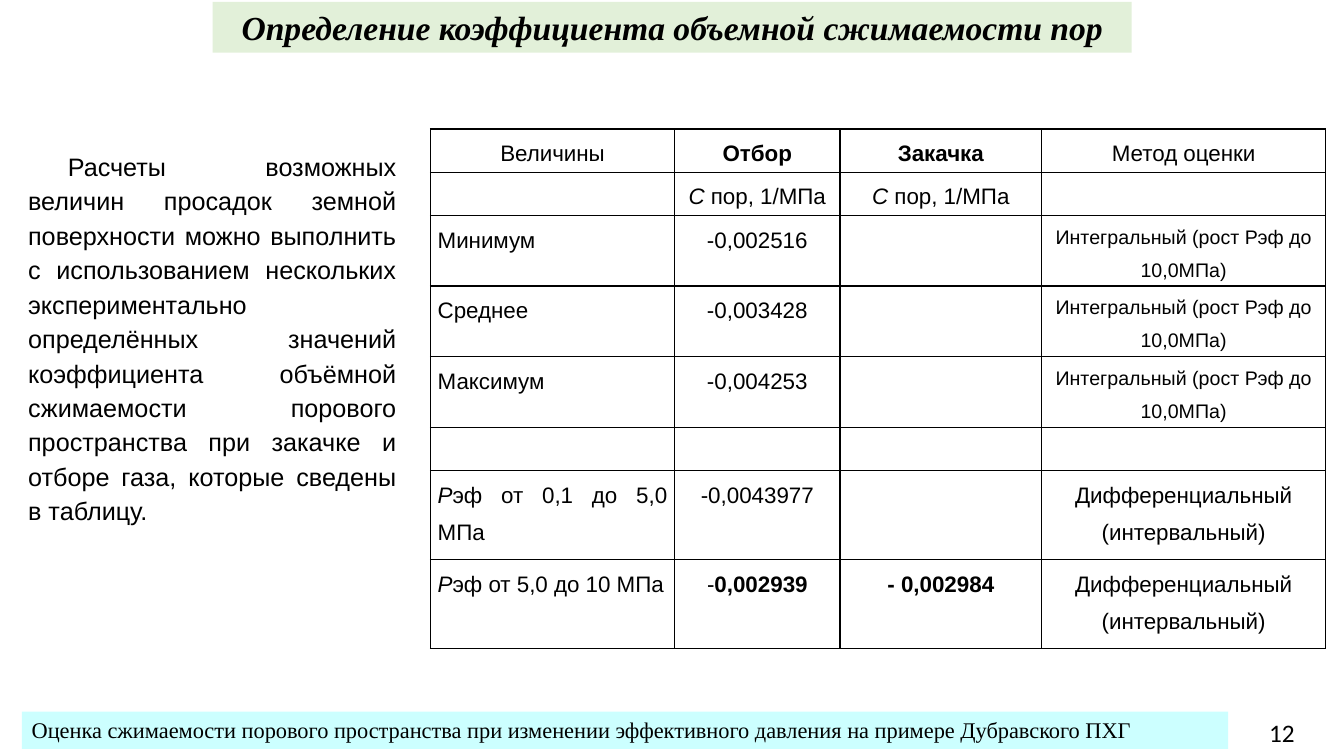
from dataclasses import dataclass

from pptx import Presentation
from pptx.dml.color import RGBColor
from pptx.enum.shapes import MSO_SHAPE
from pptx.enum.text import MSO_ANCHOR, MSO_AUTO_SIZE, PP_ALIGN
from pptx.oxml import parse_xml
from pptx.oxml.ns import nsdecls
from pptx.util import Cm, Pt

CENTER, JUSTIFY, LEFT = PP_ALIGN.CENTER, PP_ALIGN.JUSTIFY, PP_ALIGN.LEFT
TOP = MSO_ANCHOR.TOP
FIT_SHAPE, FIXED_SIZE = MSO_AUTO_SIZE.SHAPE_TO_FIT_TEXT, MSO_AUTO_SIZE.NONE
RECTANGLE = MSO_SHAPE.RECTANGLE
TITLE_ONLY = 5
BLACK, GREEN, CYAN = "000000", "E2F0D9", "CCFFFF"
SERIF, SANS, NUMBER_FONT = "Times New Roman", "Arial", "Calibri"


@dataclass
class Box:
    left: float
    top: float
    width: float
    height: float

    def lengths(self):
        return Cm(self.left), Cm(self.top), Cm(self.width), Cm(self.height)


@dataclass
class Span:
    text: str
    bold: bool = False
    italic: bool = False


@dataclass
class Entry:
    """Content of one table cell."""
    spans: list[Span]
    align: PP_ALIGN = CENTER
    size: float = 16


def color(hex_text: str) -> RGBColor:
    return RGBColor.from_string(hex_text)


def format_run(r, font: str, size: float, bold: bool = False, italic: bool = False) -> None:
    r.font.name, r.font.size = font, Pt(size)
    r.font.bold, r.font.italic = bold, italic
    r.font.color.rgb = color(BLACK)


def write_text(sp, text: str, font: str, size: float, align: PP_ALIGN,
               emphasis: bool = False, auto_size: MSO_AUTO_SIZE = FIT_SHAPE):
    tf = sp.text_frame
    tf.text = text
    tf.word_wrap, tf.auto_size, tf.vertical_anchor = True, auto_size, TOP
    p = tf.paragraphs[0]
    p.alignment = align
    format_run(p.runs[0], font, size, emphasis, emphasis)
    return p


def fill_shape(sp, hex_text: str) -> None:
    sp.fill.solid()
    sp.fill.fore_color.rgb = color(hex_text)


def outline_cell(cell) -> None:
    tc_pr = cell._tc.get_or_add_tcPr()
    for side in "LRTB":
        tc_pr.append(parse_xml(
            f'<a:ln{side} w="12700" {nsdecls("a")}><a:solidFill>'
            f'<a:srgbClr val="{BLACK}"/></a:solidFill></a:ln{side}>'))


def draw_cell(cell, entry: Entry) -> None:
    outline_cell(cell)
    cell.fill.background()
    cell.margin_left = cell.margin_right = Cm(0.18)
    cell.margin_top = cell.margin_bottom = Cm(0)
    p = cell.text_frame.paragraphs[0]
    p.alignment, p.line_spacing, p.space_after = entry.align, 1.5, Pt(8)
    p.font.size = Pt(entry.size)
    for span in entry.spans:
        r = p.add_run()
        r.text = span.text
        format_run(r, SANS, entry.size, span.bold, span.italic)


def plain(text: str) -> Entry:
    return Entry([Span(text)])


def strong(text: str) -> Entry:
    return Entry([Span(text, bold=True)])


def label(text: str) -> Entry:
    return Entry([Span(text)], JUSTIFY)


def pressure(text: str) -> Entry:
    return Entry([Span("Р", italic=True), Span(text)], JUSTIFY)


EMPTY = Entry([])
UNIT = Entry([Span("С", italic=True), Span(" пор, 1/МПа")])
INTEGRAL = Entry([Span("Интегральный (рост Рэф до 10,0МПа)")], size=14)
DIFFERENTIAL = plain("Дифференциальный (интервальный)")
ROWS = [
    [plain("Величины"), strong("Отбор"), strong("Закачка"), plain("Метод оценки")],
    [EMPTY, UNIT, UNIT, EMPTY],
    [label("Минимум"), plain("-0,002516"), EMPTY, INTEGRAL],
    [label("Среднее"), plain("-0,003428"), EMPTY, INTEGRAL],
    [label("Максимум"), plain("-0,004253"), EMPTY, INTEGRAL],
    [EMPTY] * 4,
    [pressure("эф от 0,1 до 5,0 МПа"), plain("-0,0043977"), EMPTY, DIFFERENTIAL],
    [pressure("эф от 5,0 до 10 МПа"), Entry([Span("-"), Span("0,002939", bold=True)]),
     strong("- 0,002984"), DIFFERENTIAL],
]
COLUMN_WIDTHS = [6.15, 4.17, 5.08, 7.16]
ROW_HEIGHTS = [1.09] * 6 + [2.24] * 2
TABLE_BOX = Box(10.85, 3.25, sum(COLUMN_WIDTHS), sum(ROW_HEIGHTS))


def draw_table(shapes) -> None:
    table = shapes.add_table(len(ROWS), len(COLUMN_WIDTHS), *TABLE_BOX.lengths()).table
    table.first_row = table.horz_banding = False
    for column, width in zip(table.columns, COLUMN_WIDTHS):
        column.width = Cm(width)
    for row, height, entries in zip(table.rows, ROW_HEIGHTS, ROWS):
        row.height = Cm(height)
        for cell, entry in zip(row.cells, entries):
            draw_cell(cell, entry)


def main() -> None:
    prs = Presentation()
    prs.slide_width, prs.slide_height = Cm(33.87), Cm(19.05)
    shapes = prs.slides.add_slide(prs.slide_layouts[TITLE_ONLY]).shapes

    title = shapes.title
    title.left, title.top, title.width, title.height = Box(5.36, 0.05, 23.16, 1.28).lengths()
    fill_shape(title, GREEN)
    write_text(title, "Определение коэффициента объемной сжимаемости пор",
               SERIF, 24, CENTER, emphasis=True, auto_size=FIXED_SIZE)

    footer = shapes.add_shape(RECTANGLE, *Box(0.55, 17.93, 30.4, 0.94).lengths())
    footer.shadow.inherit = False
    footer.line.fill.background()
    fill_shape(footer, CYAN)
    write_text(footer, "Оценка сжимаемости порового пространства при изменении "
               "эффективного давления на примере Дубравского ПХГ", SERIF, 16, LEFT)

    number = shapes.add_textbox(*Box(31.62, 17.96, 1.37, 1.02).lengths())
    write_text(number, "12", NUMBER_FONT, 18, CENTER)

    summary = shapes.add_textbox(*Box(0.46, 3.58, 9.78, 9.83).lengths())
    p = write_text(summary, "Расчеты возможных величин просадок земной поверхности можно "
                   "выполнить с использованием нескольких экспериментально определённых "
                   "значений коэффициента объёмной сжимаемости порового пространства при "
                   "закачке и отборе газа, которые сведены в таблицу.", SANS, 18, JUSTIFY)
    p.line_spacing = 1.14
    p._p.get_or_add_pPr().set("indent", str(Cm(1)))

    draw_table(shapes)
    prs.save("out.pptx")


if __name__ == "__main__":
    main()
